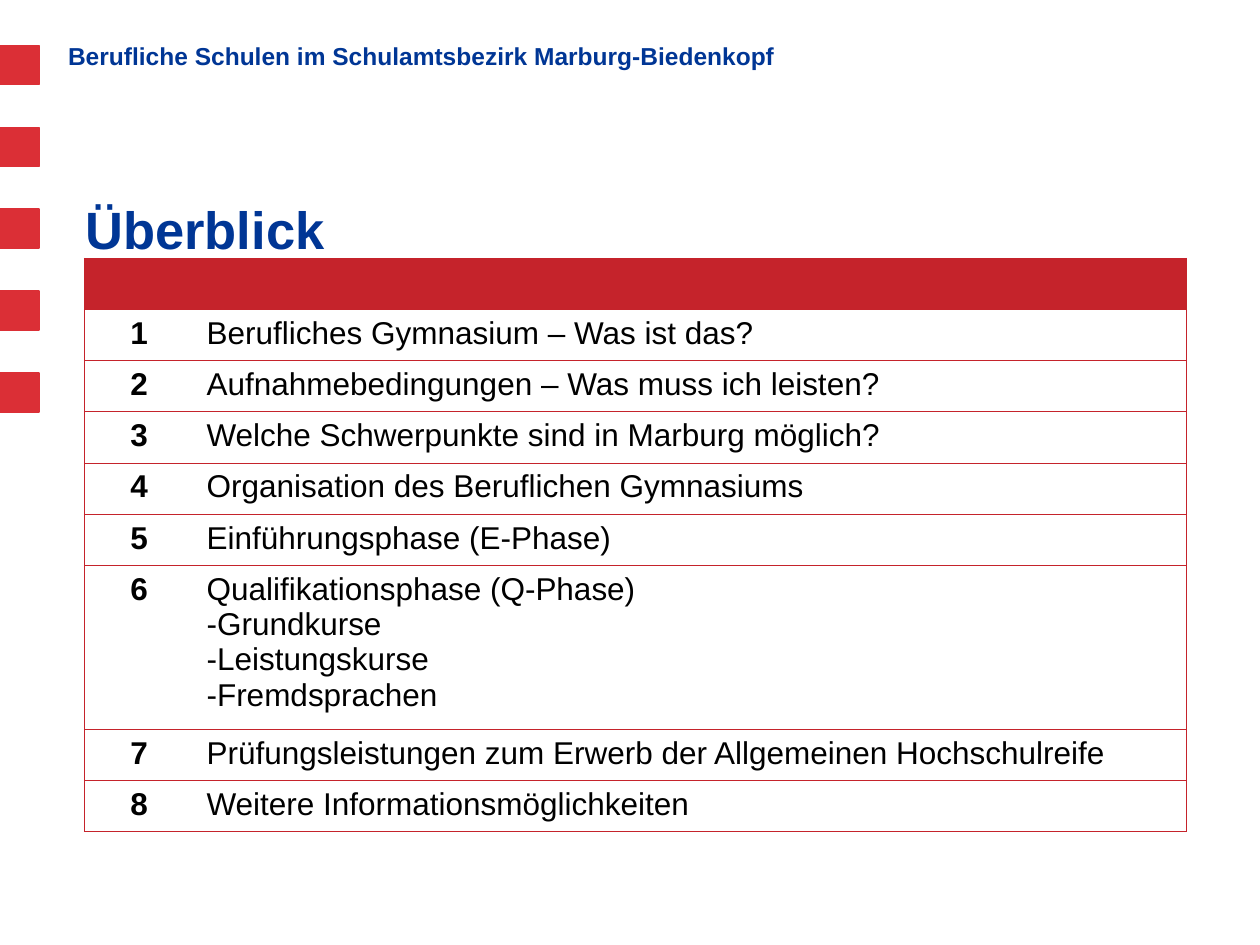
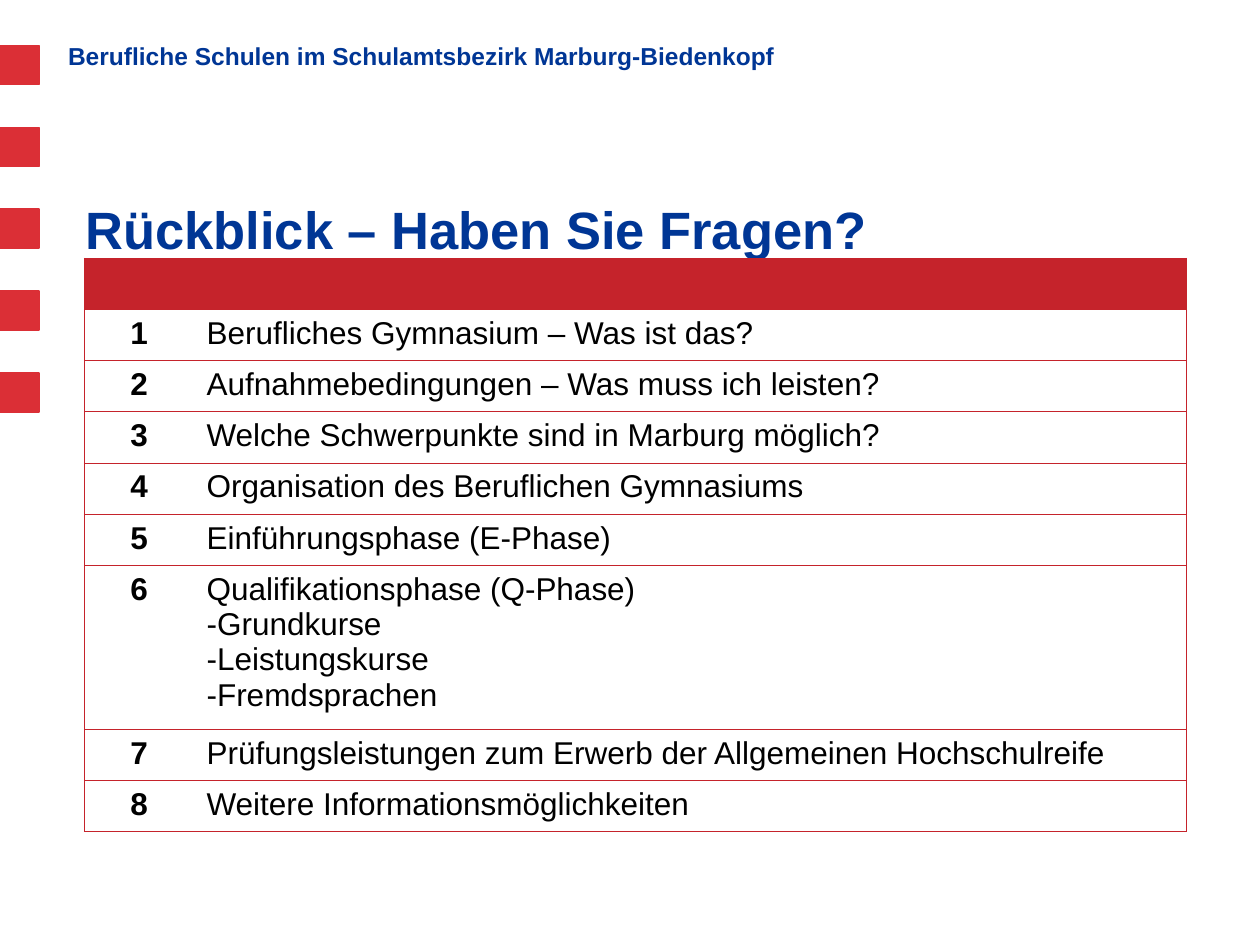
"""Build the overview and review slides about the vocational grammar school."""
from lxml import etree
from pptx import Presentation
from pptx.dml.color import RGBColor
from pptx.enum.shapes import MSO_SHAPE
from pptx.enum.text import MSO_ANCHOR, PP_ALIGN
from pptx.oxml.ns import qn
from pptx.util import Inches, Pt

RECTANGLE = MSO_SHAPE.RECTANGLE
TOP, BOTTOM = MSO_ANCHOR.TOP, MSO_ANCHOR.BOTTOM
LEFT, CENTER = PP_ALIGN.LEFT, PP_ALIGN.CENTER

SCHOOLS = "Berufliche Schulen im Schulamtsbezirk Marburg-Biedenkopf"
TITLES = ["Überblick", "Rückblick – Haben Sie Fragen?"]
TOPICS = [
    ["Berufliches Gymnasium – Was ist das?"],
    ["Aufnahmebedingungen – Was muss ich leisten?"],
    ["Welche Schwerpunkte sind in Marburg möglich?"],
    ["Organisation des Beruflichen Gymnasiums"],
    ["Einführungsphase (E-Phase)"],
    ["Qualifikationsphase (Q-Phase)", "-Grundkurse", "-Leistungskurse", "-Fremdsprachen"],
    ["Prüfungsleistungen zum Erwerb der Allgemeinen Hochschulreife"],
    ["Weitere Informationsmöglichkeiten"],
]

FONT = "Arial"
BLUE, RED, TABLE_RED, BLACK = "003695", "DB2F36", "C5232B", "000000"
SQUARE_COUNT, SQUARE_SIZE, SQUARE_TOP, SQUARE_PITCH = 5, 0.31, 0.36, 0.65
TABLE_LEFT, TABLE_TOP, TABLE_HEIGHT = 0.67, 2.05, 4.47
COLUMN_WIDTHS = [0.87, 7.88]
LINE_HEIGHT = 0.27
LINE_COUNTS = [1] + [len(topic) for topic in TOPICS]
ROW_PADDING = (TABLE_HEIGHT - LINE_HEIGHT * sum(LINE_COUNTS)) / len(LINE_COUNTS)


def color(hex_code):
    return RGBColor.from_string(hex_code)


def write(frame, lines, size, hex_code, bold, align=LEFT):
    for index, line in enumerate(lines):
        paragraph = frame.paragraphs[0] if index == 0 else frame.add_paragraph()
        paragraph.alignment = align
        run = paragraph.add_run()
        run.text = line
        run.font.name, run.font.size, run.font.bold = FONT, Pt(size), bold
        run.font.color.rgb = color(hex_code)


def add_heading(slide, box, text, size, anchor, side_inset, edge_inset):
    frame = slide.shapes.add_textbox(*map(Inches, box)).text_frame
    frame.word_wrap, frame.vertical_anchor = True, anchor
    frame.margin_left = frame.margin_right = Inches(side_inset)
    frame.margin_top = frame.margin_bottom = Inches(edge_inset)
    write(frame, [text], size, BLUE, True)
    return frame


def add_frame(slide):
    for index in range(SQUARE_COUNT):
        top = SQUARE_TOP + index * SQUARE_PITCH
        square = slide.shapes.add_shape(
            RECTANGLE, 0, Inches(top), Inches(SQUARE_SIZE), Inches(SQUARE_SIZE))
        square.shadow.inherit = False
        square.fill.solid()
        square.fill.fore_color.rgb = square.line.color.rgb = color(RED)
        square.line.width = Pt(0.75)
    schools = add_heading(slide, (0.54, 0.3, 8.03, 0.31), SCHOOLS, 14, TOP, 0, 0.05)
    schools.paragraphs[0].line_spacing = 0.9


def set_borders(cell, hidden_side):
    properties = cell._tc.get_or_add_tcPr()
    for side in ("L", "R", "T", "B"):
        line = etree.SubElement(properties, qn(f"a:ln{side}"), w=str(Pt(0.75)))
        if side == hidden_side:
            etree.SubElement(line, qn("a:noFill"))
        else:
            fill = etree.SubElement(line, qn("a:solidFill"))
            etree.SubElement(fill, qn("a:srgbClr"), val=TABLE_RED)


def add_topics(slide):
    table = slide.shapes.add_table(
        len(LINE_COUNTS), len(COLUMN_WIDTHS), Inches(TABLE_LEFT), Inches(TABLE_TOP),
        Inches(sum(COLUMN_WIDTHS)), Inches(TABLE_HEIGHT)).table
    table.horz_banding = False
    for column, width in zip(table.columns, COLUMN_WIDTHS):
        column.width = Inches(width)
    for row_index, (row, line_count) in enumerate(zip(table.rows, LINE_COUNTS)):
        row.height = Inches(ROW_PADDING + LINE_HEIGHT * line_count)
        for cell, hidden_side in zip(row.cells, "RL"):
            set_borders(cell, hidden_side)
            if row_index == 0:
                cell.fill.solid()
                cell.fill.fore_color.rgb = color(TABLE_RED)
            else:
                cell.fill.background()
    for number, topic in enumerate(TOPICS, 1):
        write(table.cell(number, 0).text_frame, [str(number)], 18, BLACK, True, CENTER)
        write(table.cell(number, 1).text_frame, topic, 18, BLACK, False)


def main():
    deck = Presentation()
    deck.slide_width, deck.slide_height = Inches(10), Inches(7.5)
    for title in TITLES:
        slide = deck.slides.add_slide(deck.slide_layouts[6])
        add_frame(slide)
        add_heading(slide, (0.58, 0.98, 9.22, 1.08), title, 30, BOTTOM, 0.1, 0)
        add_topics(slide)
    deck.save("out.pptx")


if __name__ == "__main__":
    main()
